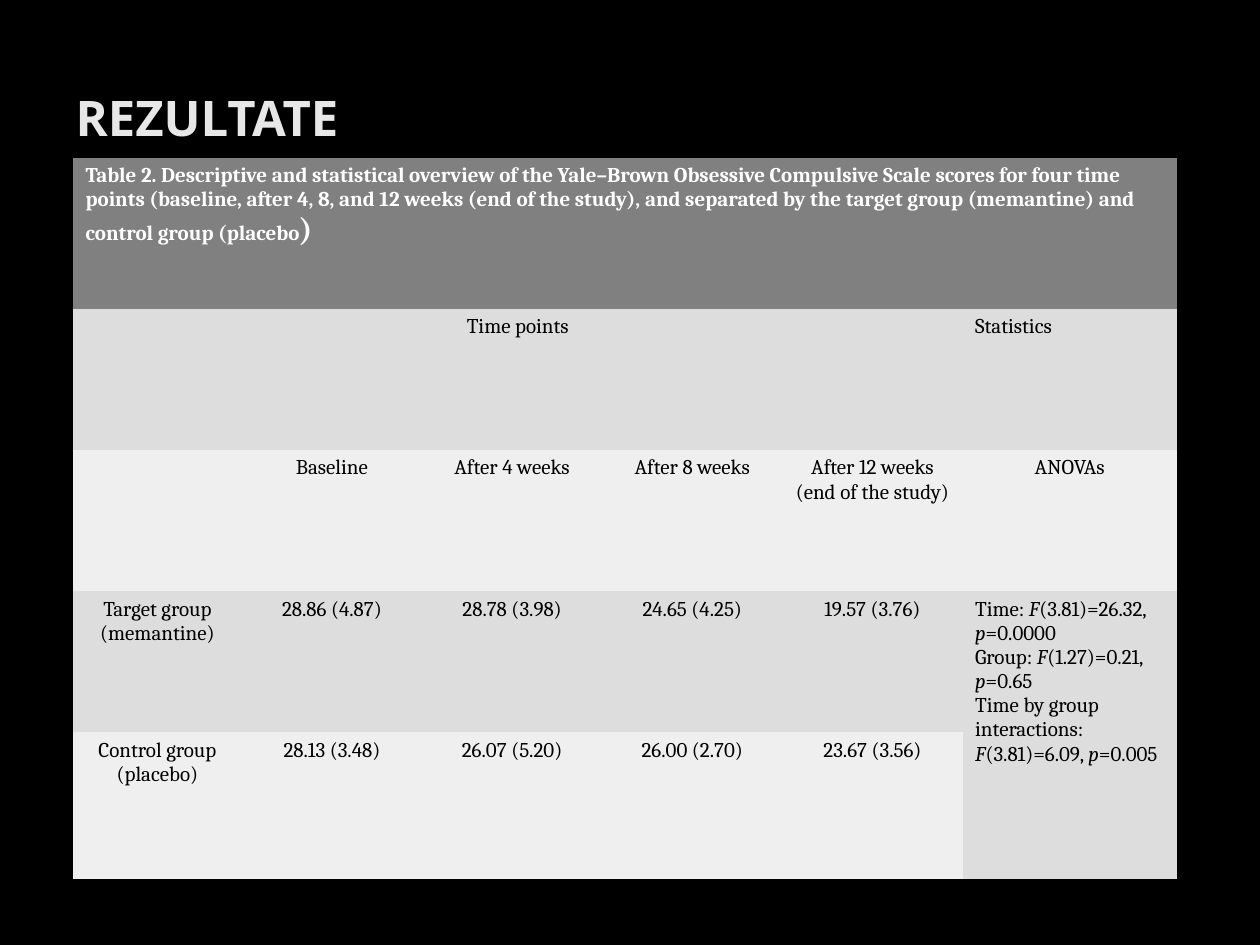
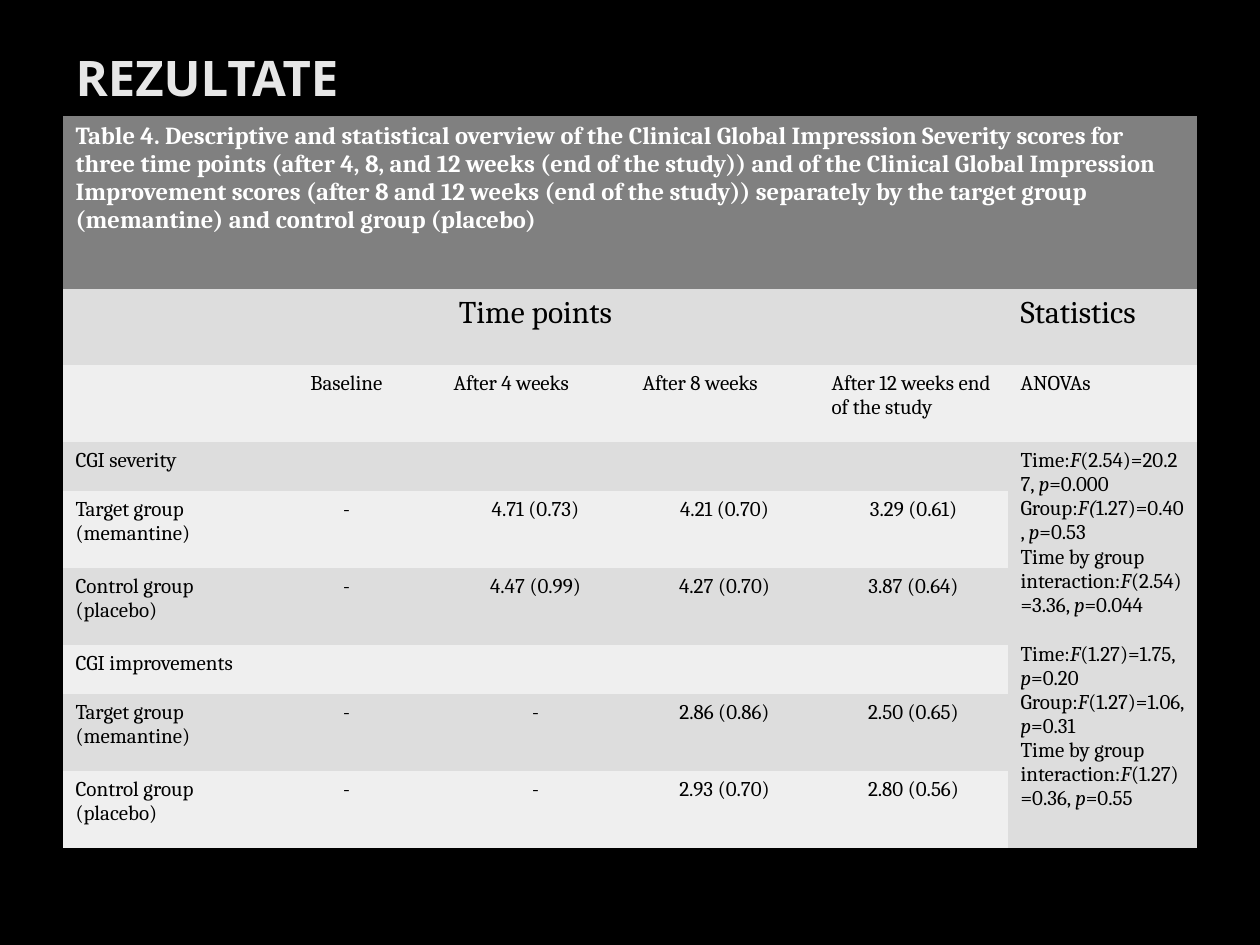
from dataclasses import dataclass

from pptx import Presentation
from pptx.dml.color import RGBColor
from pptx.enum.text import MSO_ANCHOR, MSO_AUTO_SIZE, PP_ALIGN
from pptx.oxml.ns import qn
from pptx.util import Emu, Pt

EMU_PER_PX = 9144
NO_GRID_STYLE = "{2D5ABB26-0587-4C30-8999-92F81FD0307C}"


@dataclass(frozen=True)
class Theme:
    """Colours, fonts and type sizes shared by the slides."""
    background: str = "000000"
    title_color: str = "E7E7E7"
    caption_fill: str = "808080"
    caption_color: str = "FFFFFF"
    text_color: str = "000000"
    bands: tuple = ("EFEFEF", "DDDDDD")
    title_font: str = "Open Sans"
    body_font: str = "Cambria"
    title_size: int = 28
    large_size: int = 18
    caption_size: int = 14
    body_size: int = 12


THEME = Theme()


def px(n):
    """Turn whole pixels into EMU."""
    return Emu(n * EMU_PER_PX)


def paint(fill, color):
    """Give a fill one solid colour."""
    fill.solid()
    fill.fore_color.rgb = RGBColor.from_string(color)


def write(tf, text, *, size=THEME.body_size, color=THEME.text_color,
          font=THEME.body_font, bold=False, align=PP_ALIGN.LEFT,
          space_before=0, append=False):
    """Add lines of text, with parts between asterisks in italics."""
    for i, line in enumerate(text.split("\n")):
        p = tf.paragraphs[-1]
        if p.runs and not (append and i == 0):
            p = tf.add_paragraph()
        p.alignment = align
        if space_before and i == 0:
            p.space_before = Pt(space_before)
        for j, part in enumerate(line.split("*")):
            if part:
                r = p.add_run()
                r.text = part
                r.font.name = font
                r.font.size = Pt(size)
                r.font.bold = bold
                r.font.italic = j % 2 == 1
                r.font.color.rgb = RGBColor.from_string(color)


def add_title(s, box, text):
    """Move the title placeholder into the box and fill it."""
    sp = s.shapes.title
    sp.left, sp.top, sp.width, sp.height = map(px, box)
    tf = sp.text_frame
    tf.auto_size = MSO_AUTO_SIZE.NONE
    tf.vertical_anchor = MSO_ANCHOR.MIDDLE
    write(tf, text, size=THEME.title_size, color=THEME.title_color,
          font=THEME.title_font, bold=True)


def add_scores(s, box, widths, heights, rows, merges, left, sizes):
    """Add a banded score table under a grey caption row."""
    frame = s.shapes.add_table(len(heights), len(widths), *map(px, box))
    for style in frame.element.iter(qn("a:tableStyleId")):
        style.text = NO_GRID_STYLE
    table = frame.table
    for column, width in zip(table.columns, widths):
        column.width = px(width)
    for row, height in zip(table.rows, heights):
        row.height = px(height)
    for r in range(len(heights)):
        for c in range(len(widths)):
            paint(table.cell(r, c).fill,
                  THEME.bands[r % 2] if r else THEME.caption_fill)
    for top, first, bottom, last in merges:
        table.cell(top, first).merge(table.cell(bottom, last))
    for r, row in enumerate(rows):
        caption = r == 0
        for c, text in enumerate(row):
            if text:
                write(table.cell(r, c).text_frame, text,
                      size=sizes.get(r, THEME.body_size), bold=caption,
                      color=THEME.caption_color if caption else THEME.text_color,
                      align=PP_ALIGN.LEFT if caption or (r, c) in left
                      else PP_ALIGN.CENTER)
    return table


def add_results_slide(prs, title_box, **scores):
    """Add a titled slide with one score table."""
    s = prs.slides.add_slide(prs.slide_layouts.get_by_name("Title Only"))
    add_title(s, title_box, "REZULTATE")
    return add_scores(s, **scores)


def add_obsession_slide(prs):
    """Add the slide with the obsessive compulsive scale scores."""
    rows = [
        ["Table 2. Descriptive and statistical overview of the Yale–Brown Obsessive "
         "Compulsive Scale scores for four time points (baseline, after 4, 8, and 12 "
         "weeks (end of the study), and separated by the target group (memantine) and "
         "control group (placebo"],
        ["Time points", "", "", "", "", "Statistics"],
        ["", "Baseline", "After 4 weeks", "After 8 weeks",
         "After 12 weeks (end of the study)", "ANOVAs"],
        ["Target group\n(memantine)", "28.86 (4.87)", "28.78 (3.98)",
         "24.65 (4.25)", "19.57 (3.76)",
         "Time: *F*(3.81)=26.32, *p*=0.0000\n"
         "Group: *F*(1.27)=0.21, *p*=0.65\n"
         "Time by group interactions: *F*(3.81)=6.09, *p*=0.005"],
        ["Control group\n(placebo)", "28.13 (3.48)", "26.07 (5.20)",
         "26.00 (2.70)", "23.67 (3.56)"],
    ]
    table = add_results_slide(
        prs, (50, 30, 900, 125), box=(58, 125, 875, 575),
        widths=[134] + [143] * 4 + [170], heights=[120] + [112] * 3 + [117],
        rows=rows, merges=[(0, 0, 0, 5), (1, 0, 1, 4), (3, 5, 4, 5)],
        left={(1, 5), (3, 5)}, sizes={})
    write(table.cell(0, 0).text_frame, ")", size=THEME.large_size,
          color=THEME.caption_color, bold=True, append=True)


def add_impression_slide(prs):
    """Add the slide with the clinical global impression scores."""
    target, control = "Target group\n(memantine)", "Control group\n(placebo)"
    rows = [
        ["Table 4. Descriptive and statistical overview of the Clinical Global "
         "Impression Severity scores for three time points (after 4, 8, and 12 weeks "
         "(end of the study)) and of the Clinical Global Impression\n"
         "Improvement scores (after 8 and 12 weeks (end of the study)) separately by "
         "the target group (memantine) and control group (placebo)"],
        ["Time points", "", "", "", "", "Statistics"],
        ["", "Baseline", "After 4 weeks", "After 8 weeks",
         "After 12 weeks end of the study", "ANOVAs"],
        ["CGI severity", "", "", "", "",
         "Time:*F*(2.54)=20.27, *p*=0.000\n"
         "Group:*F(*1.27)=0.40, *p*=0.53\n"
         "Time by group interaction:*F*(2.54)=3.36, *p*=0.044"],
        [target, "-", "4.71 (0.73)", "4.21 (0.70)", "3.29 (0.61)"],
        [control, "-", "4.47 (0.99)", "4.27 (0.70)", "3.87 (0.64)"],
        ["CGI improvements"],
        [target, "-", "-", "2.86 (0.86)", "2.50 (0.65)"],
        [control, "-", "-", "2.93 (0.70)", "2.80 (0.56)"],
    ]
    left = {(1, 5), (3, 5)}
    left |= {(2, c) for c in range(2, 6)} | {(r, 0) for r in range(3, 9)}
    table = add_results_slide(
        prs, (50, 30, 900, 62), box=(50, 92, 900, 583),
        widths=[150] * 6, heights=[137, 61, 61] + [39, 61, 61] * 2,
        rows=rows, left=left,
        merges=[(0, 0, 0, 5), (1, 0, 1, 4), (3, 0, 3, 4), (6, 0, 6, 4),
                (3, 5, 8, 5)],
        sizes={0: THEME.caption_size, 1: THEME.large_size})
    write(table.cell(3, 5).text_frame,
          "Time:*F*(1.27)=1.75, *p*=0.20\n"
          "Group:*F*(1.27)=1.06, *p*=0.31\n"
          "Time by group interaction:*F*(1.27)=0.36, *p*=0.55", space_before=14)


def main():
    """Build and save the presentation."""
    prs = Presentation()
    prs.slide_width, prs.slide_height = px(1000), px(750)
    paint(prs.slide_master.background.fill, THEME.background)
    add_obsession_slide(prs)
    add_impression_slide(prs)
    prs.save("out.pptx")


if __name__ == "__main__":
    main()
